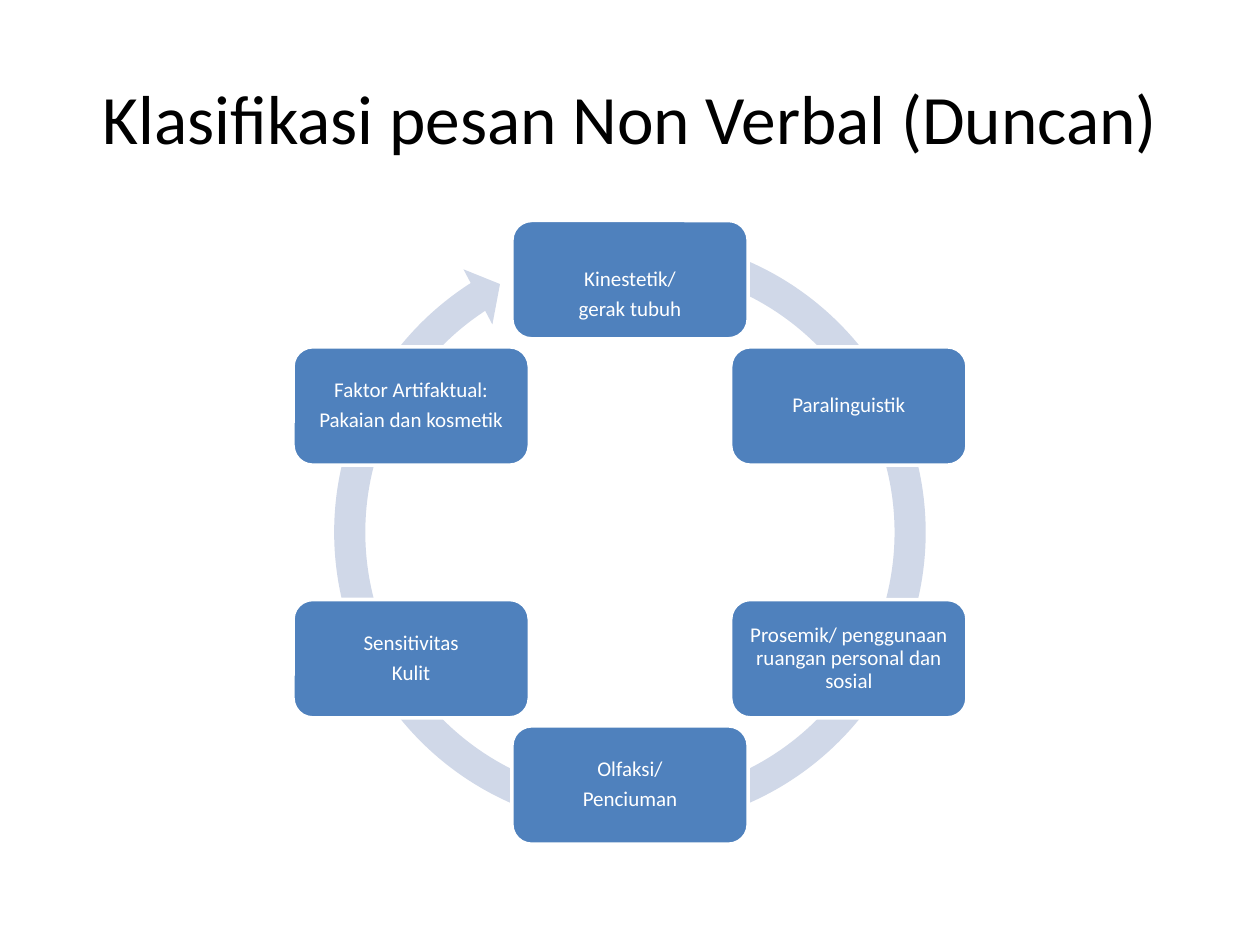
from math import cos, radians, sin

from pptx import Presentation
from pptx.dml.color import RGBColor as RGB
from pptx.enum.shapes import MSO_SHAPE as Shape
from pptx.enum.text import MSO_ANCHOR as Anchor, MSO_AUTO_SIZE as Fit, PP_ALIGN as Align
from pptx.util import Pt

TITLE = "Klasifikasi pesan Non Verbal (Duncan)"
# Clockwise from the top: lines of text, extra room above them
NODES = [
    (["Kinestetik/", "gerak tubuh"], 17),
    (["Paralinguistik"], 0),
    (["Prosemik/ penggunaan ruangan personal dan sosial"], 0),
    (["Olfaksi/", "Penciuman"], 0),
    (["Sensitivitas", "Kulit"], 0),
    (["Faktor Artifaktual:", "Pakaian dan kosmetik"], 0),
]
COLORS = {"text": "000000", "node": "4F81BD", "ring": "D0D8E8", "white": "FFFFFF"}
FONT = "Calibri"
MID_X, MID_Y, RADIUS = 360, 304.2, 144.4
NODE_W, NODE_H, PAD = 135, 67.6, 3.6
RING = 355.8
RING_ADJ = [0.05, 3.13, 142.29, 171.27, 0.05]


def color(name):
    return RGB.from_string(COLORS[name])


def write(shape, lines, size, tint, pad=None, drop=0, leading=None, after=None):
    """Fill a shape with centred lines; drop is extra inset at the top."""
    frame = shape.text_frame
    frame.word_wrap = True
    frame.auto_size = Fit.NONE
    frame.vertical_anchor = Anchor.MIDDLE
    if pad is not None:
        frame.margin_left = frame.margin_right = frame.margin_bottom = Pt(pad)
        frame.margin_top = Pt(pad + drop)
    frame.text = "\n".join(lines)
    for para in frame.paragraphs:
        para.alignment = Align.CENTER
        para.line_spacing = leading
        if after is not None:
            para.space_after = Pt(after)
        para.font.name = FONT
        para.font.size = Pt(size)
        para.font.color.rgb = color(tint)


def draw(slide, kind, mid_x, mid_y, width, height, fill):
    """Add a filled shape centred on a point, without line or shadow."""
    shape = slide.shapes.add_shape(
        kind, Pt(mid_x - width / 2), Pt(mid_y - height / 2), Pt(width), Pt(height))
    shape.shadow.inherit = False
    shape.fill.solid()
    shape.fill.fore_color.rgb = color(fill)
    shape.line.fill.background()
    return shape


def main():
    deck = Presentation()
    deck.slide_width, deck.slide_height = Pt(720), Pt(540)
    slide = deck.slides.add_slide(deck.slide_layouts[5])

    title = slide.shapes.title
    title.left, title.top, title.width, title.height = Pt(36), Pt(21.6), Pt(648), Pt(90)
    write(title, [TITLE], 39.6, "text")

    ring = draw(slide, Shape.CIRCULAR_ARROW, MID_X, MID_Y, RING, RING, "ring")
    for i, value in enumerate(RING_ADJ):
        ring.adjustments[i] = value

    for i, (lines, drop) in enumerate(NODES):
        turn = radians(i * 360 / len(NODES))
        node = draw(slide, Shape.ROUNDED_RECTANGLE,
                    MID_X + RADIUS * sin(turn), MID_Y - RADIUS * cos(turn),
                    NODE_W, NODE_H, "node")
        node.line.color.rgb = color("white")
        node.line.width = Pt(2)
        write(node, lines, 12, "white", pad=PAD, drop=drop, leading=0.9, after=4.2)

    deck.save("out.pptx")


if __name__ == "__main__":
    main()
